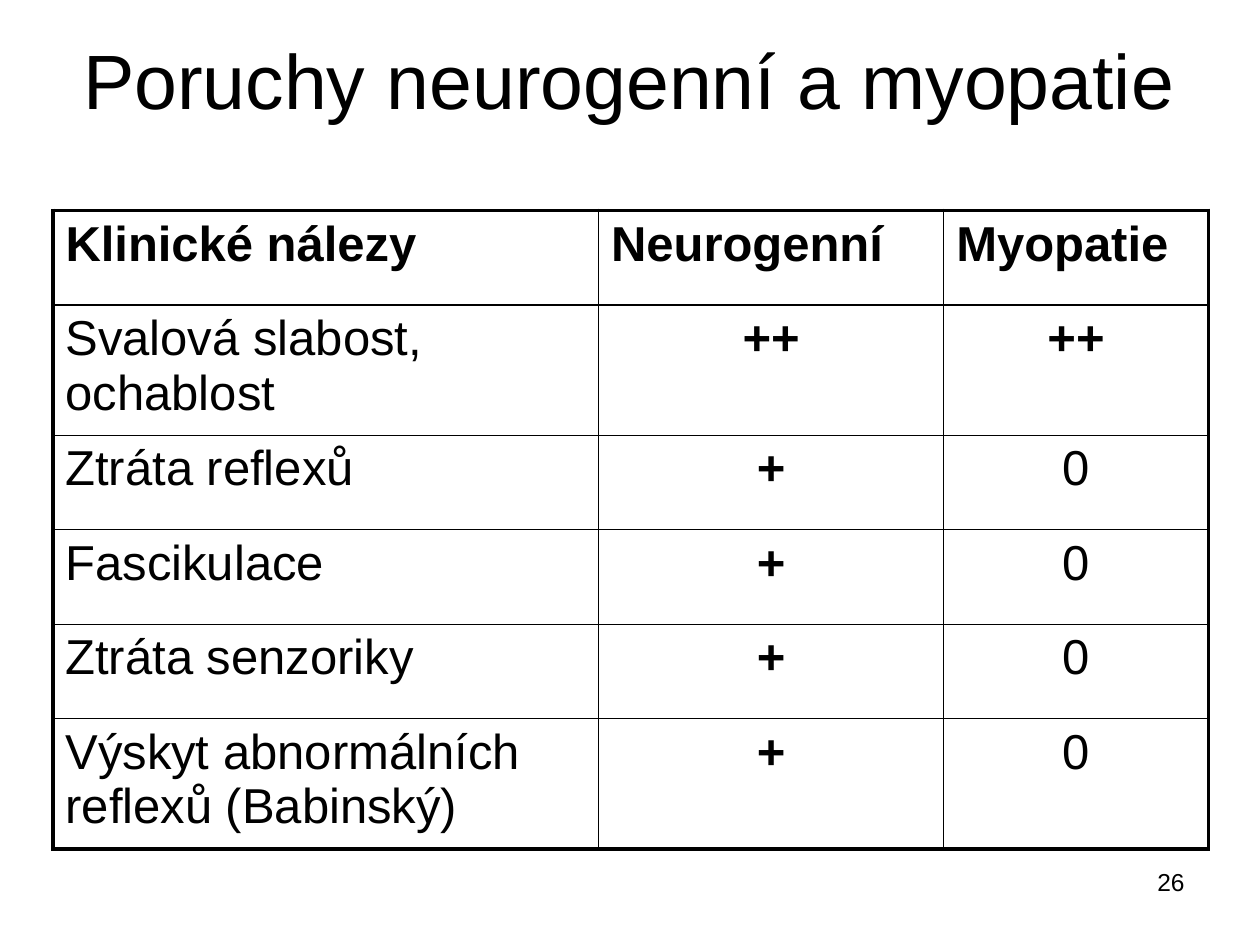
from dataclasses import dataclass

from lxml import etree
from pptx import Presentation
from pptx.dml.color import RGBColor
from pptx.enum.text import MSO_ANCHOR, PP_ALIGN
from pptx.oxml.ns import qn
from pptx.util import Inches, Pt

LEFT, CENTER, RIGHT = PP_ALIGN.LEFT, PP_ALIGN.CENTER, PP_ALIGN.RIGHT
TOP, MIDDLE = MSO_ANCHOR.TOP, MSO_ANCHOR.MIDDLE


@dataclass(frozen=True)
class Theme:
    font: str = "Arial"
    ink: str = "000000"
    title_size: int = 44
    table_size: int = 28
    number_size: int = 14
    outer_line: float = 2.25
    inner_line: float = 1


theme = Theme()


def write(text_frame, text, size, alignment, bold=False):
    paragraph = text_frame.paragraphs[0]
    paragraph.alignment = alignment
    run = paragraph.add_run()
    run.text = text
    run.font.name = theme.font
    run.font.size = Pt(size)
    run.font.bold = bold
    run.font.color.rgb = RGBColor.from_string(theme.ink)


def add_border(cell, side, width):
    properties = cell._tc.get_or_add_tcPr()
    line = etree.SubElement(properties, qn(f"a:ln{side}"), w=str(Pt(width)))
    fill = etree.SubElement(line, qn("a:solidFill"))
    etree.SubElement(fill, qn("a:srgbClr"), val=theme.ink)


presentation = Presentation()
presentation.slide_width = Inches(10)
presentation.slide_height = Inches(7.5)
slide = presentation.slides.add_slide(presentation.slide_layouts[6])

labels = [
    ("26", (7.17, 6.83, 2.33, 0.52), theme.number_size, RIGHT, TOP),
    ("Poruchy neurogenní a myopatie", (0.33, 0, 9.33, 1.25), theme.title_size, CENTER, MIDDLE),
]
for text, box, size, alignment, anchor in labels:
    text_frame = slide.shapes.add_textbox(*map(Inches, box)).text_frame
    text_frame.word_wrap = True
    text_frame.vertical_anchor = anchor
    write(text_frame, text, size, alignment)

findings = [
    ("Klinické nálezy", "Neurogenní", "Myopatie"),
    ("Svalová slabost, ochablost", "++", "++"),
    ("Ztráta reflexů", "+", "0"),
    ("Fascikulace", "+", "0"),
    ("Ztráta senzoriky", "+", "0"),
    ("Výskyt abnormálních reflexů (Babinský)", "+", "0"),
]
column_widths = [4.33, 2.74, 2.1]
row_heights = [0.75, 1.03, 0.75, 0.75, 0.75, 1.03]
last_row, last_column = len(row_heights) - 1, len(column_widths) - 1

table = slide.shapes.add_table(
    len(row_heights), len(column_widths), Inches(0.42), Inches(1.67),
    Inches(sum(column_widths)), Inches(sum(row_heights)),
).table
table.first_row = False
table.horz_banding = False
for column, width in zip(table.columns, column_widths):
    column.width = Inches(width)
for row, height in zip(table.rows, row_heights):
    row.height = Inches(height)

for row_index, finding in enumerate(findings):
    for column_index, text in enumerate(finding):
        cell = table.cell(row_index, column_index)
        is_header = row_index == 0
        is_mark = column_index > 0 and not is_header
        bold = is_header or (is_mark and text != "0")
        write(cell.text_frame, text, theme.table_size, CENTER if is_mark else LEFT, bold)
        outer_sides = {
            "L": column_index == 0,
            "R": column_index == last_column,
            "T": row_index == 0,
            "B": row_index == last_row,
        }
        for side, is_outer in outer_sides.items():
            add_border(cell, side, theme.outer_line if is_outer else theme.inner_line)
        cell.fill.background()

presentation.save("out.pptx")
